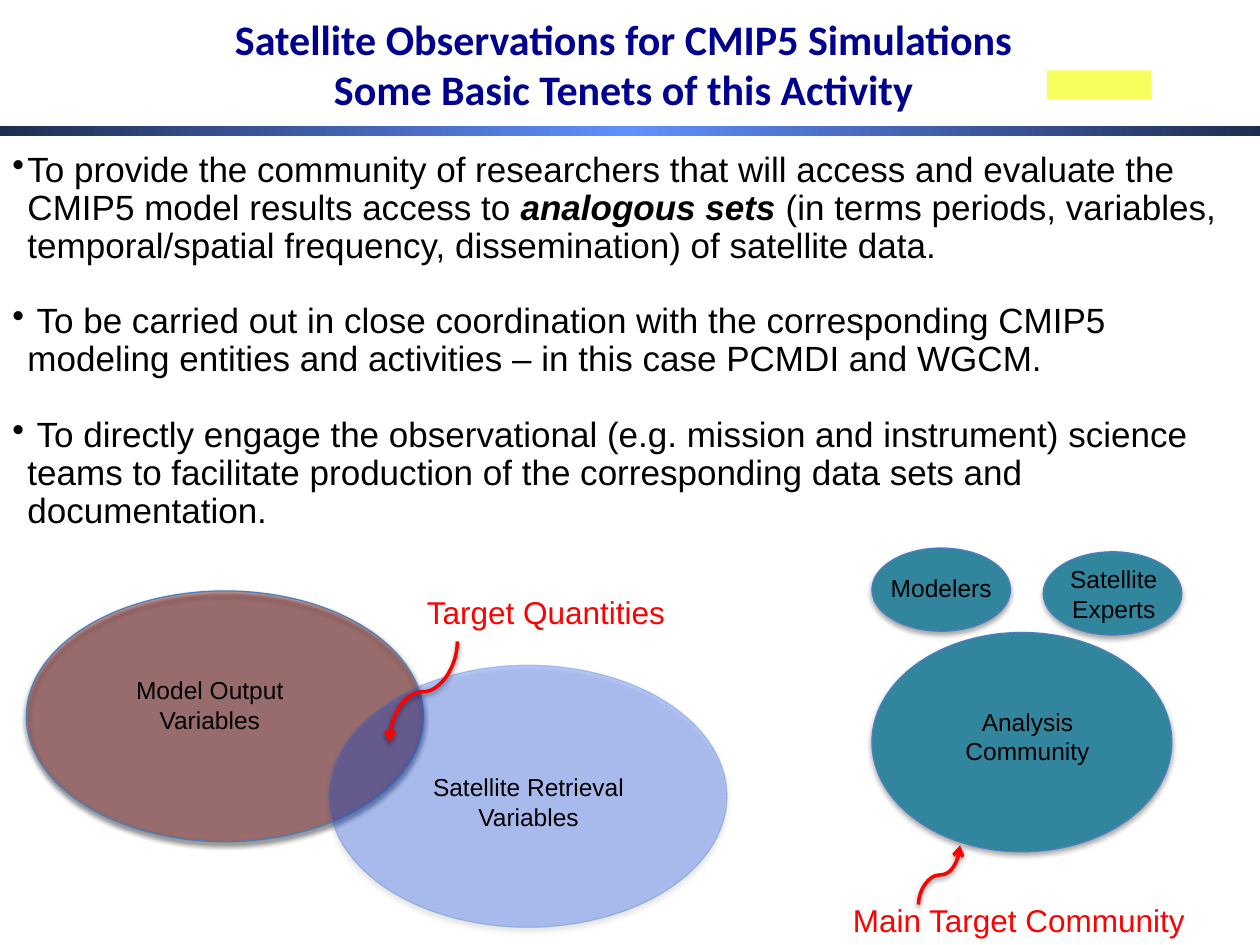
from lxml import etree
from pptx import Presentation
from pptx.dml.color import RGBColor
from pptx.enum.shapes import MSO_CONNECTOR, MSO_SHAPE
from pptx.enum.text import MSO_ANCHOR, PP_ALIGN
from pptx.oxml.ns import qn
from pptx.util import Inches, Pt

RECT, OVAL = MSO_SHAPE.RECTANGLE, MSO_SHAPE.OVAL
CURVE = MSO_CONNECTOR.CURVE
CENTER = PP_ALIGN.CENTER
MIDDLE = MSO_ANCHOR.MIDDLE
COLORS = {
    "black": "000000", "navy": "000090", "red": "FF0000", "blue": "618FFD",
    "midnight": "1F2D50", "yellow": "F7FF5F", "teal": "31859C",
    "outline": "4B7EBC", "maroon": "800000", "azure": "0949FF",
}


def write(para, text, size, color="black", font="Arial", bold=False, italic=False):
    span = para.add_run()
    span.text = text
    span.font.size = Pt(size)
    span.font.name = font
    span.font.bold = bold
    span.font.italic = italic
    span.font.color.rgb = RGBColor.from_string(COLORS[color])


def add_shadow(item, alpha, distance):
    effects = etree.SubElement(item._element.spPr, qn("a:effectLst"))
    shadow = etree.SubElement(effects, qn("a:outerShdw"), blurRad=str(Pt(3.1)),
                              dist=str(Pt(distance)), dir="5400000", rotWithShape="0")
    tint = etree.SubElement(shadow, qn("a:srgbClr"), val=COLORS["black"])
    etree.SubElement(tint, qn("a:alpha"), val=str(alpha * 1000))


deck = Presentation()
deck.slide_width, deck.slide_height = Inches(10), Inches(7.5)
page = deck.slides.add_slide(deck.slide_layouts[6])

rule = page.shapes.add_shape(RECT, Inches(0), Inches(1), Inches(10), Inches(0.08))
rule.shadow.inherit = False
rule.line.fill.background()
rule.fill.gradient()
rule.fill.gradient_angle = 0
stop_list = rule._element.spPr.find(qn("a:gradFill")).find(qn("a:gsLst"))
for old_stop in list(stop_list):
    stop_list.remove(old_stop)
for position, color in ((0, "midnight"), (50, "blue"), (100, "midnight")):
    stop = etree.SubElement(stop_list, qn("a:gs"), pos=str(position * 1000))
    etree.SubElement(stop, qn("a:srgbClr"), val=COLORS[color])

block = page.shapes.add_shape(RECT, Inches(8.31), Inches(0.56), Inches(0.83), Inches(0.23))
block.shadow.inherit = False
block.line.fill.background()
block.fill.solid()
block.fill.fore_color.rgb = RGBColor.from_string(COLORS["yellow"])

tenets = [
    [("To provide the community of researchers that will access and evaluate the "
      "CMIP5 model results access to ", False),
     ("analogous sets ", True),
     ("(in terms periods, variables, temporal/spatial frequency, dissemination) "
      "of satellite data.", False)],
    [(" To be carried out in close coordination with the corresponding CMIP5 "
      "modeling entities and activities – in this case PCMDI and WGCM.", False)],
    [(" To directly engage the observational (e.g. mission and instrument) science "
      "teams to facilitate production of the corresponding data sets and "
      "documentation.", False)],
]
body = page.shapes.add_textbox(Inches(0), Inches(1.16), Inches(10), Inches(3.43)).text_frame
body.word_wrap = True
for index, tenet in enumerate(tenets):
    para = body.add_paragraph() if index else body.paragraphs[0]
    props = para._p.get_or_add_pPr()
    props.set("marL", str(Inches(0.12)))
    props.set("indent", str(Inches(-0.12)))
    etree.SubElement(props, qn("a:buChar"), char="•")
    para.line_spacing = 0.9
    if index:
        para.space_before = Pt(21.7)
    for text, strong in tenet:
        write(para, text, 20, bold=strong, italic=strong)

ovals = [
    ((6.92, 4.35, 1.1, 0.66), "teal", 100, 100,
     ["Modelers"], (6.96, 4.5, 1.02, 0.34)),
    ((8.28, 4.38, 1.1, 0.66), "teal", 100, 100,
     ["Satellite ", "Experts"], (8.39, 4.43, 0.9, 0.57)),
    ((6.92, 5.02, 2.38, 1.74), "teal", 100, 100,
     ["Analysis", "Community"], (7.54, 5.56, 1.23, 0.57)),
    ((0.21, 4.69, 3.15, 1.99), "maroon", 35, 100,
     ["Model Output", "Variables"], (0.97, 5.31, 1.39, 0.57)),
    ((2.61, 5.28, 3.16, 2.08), "azure", 28, 32,
     ["Satellite Retrieval", "Variables"], (3.14, 6.08, 2.11, 0.57)),
]
for place, color, fill_alpha, line_alpha, lines, label_place in ovals:
    oval = page.shapes.add_shape(OVAL, *map(Inches, place))
    oval.fill.solid()
    oval.fill.fore_color.rgb = RGBColor.from_string(COLORS[color])
    oval.line.color.rgb = RGBColor.from_string(COLORS["outline"])
    oval.line.width = Pt(0.75)
    props = oval._element.spPr
    for paint, alpha in ((props, fill_alpha), (props.find(qn("a:ln")), line_alpha)):
        if alpha < 100:
            tint = paint.find(qn("a:solidFill")).find(qn("a:srgbClr"))
            etree.SubElement(tint, qn("a:alpha"), val=str(alpha * 1000))
    add_shadow(oval, 35, 1.8)
    label = page.shapes.add_textbox(*map(Inches, label_place)).text_frame
    label.word_wrap = len(lines[0]) > 15
    for index, line in enumerate(lines):
        para = label.add_paragraph() if index else label.paragraphs[0]
        para.alignment = CENTER
        write(para, line, 14)

callouts = [
    ("Main Target Community", (6.67, 7.1, 2.88, 0.4), (7.69, 7.11, 7.22, 6.78)),
    ("Target Quantities", (3.29, 4.66, 2.11, 0.4), (2.96, 5.22, 3.76, 5.76)),
]
for text, place, ends in callouts:
    callout = page.shapes.add_textbox(*map(Inches, place)).text_frame
    callout.word_wrap = False
    write(callout.paragraphs[0], text, 18, "red")
    arrow = page.shapes.add_connector(CURVE, *map(Inches, ends))
    arrow._element.spPr.find(qn("a:xfrm")).set("rot", "5400000")
    arrow.line.color.rgb = RGBColor.from_string(COLORS["red"])
    arrow.line.width = Pt(2)
    etree.SubElement(arrow._element.spPr.find(qn("a:ln")), qn("a:tailEnd"), type="arrow")
    add_shadow(arrow, 38, 1.6)

title = page.shapes.add_textbox(Inches(0.45), Inches(-0.12), Inches(9), Inches(1.25)).text_frame
title.word_wrap = True
title.vertical_anchor = MIDDLE
heading = title.paragraphs[0]
heading.alignment = CENTER
write(heading, "Satellite Observations for CMIP5 Simulations", 24, "navy", "Calibri", True)
heading.add_line_break()
write(heading, "Some Basic Tenets of this Activity", 24, "navy", "Calibri", True)

deck.save("out.pptx")
